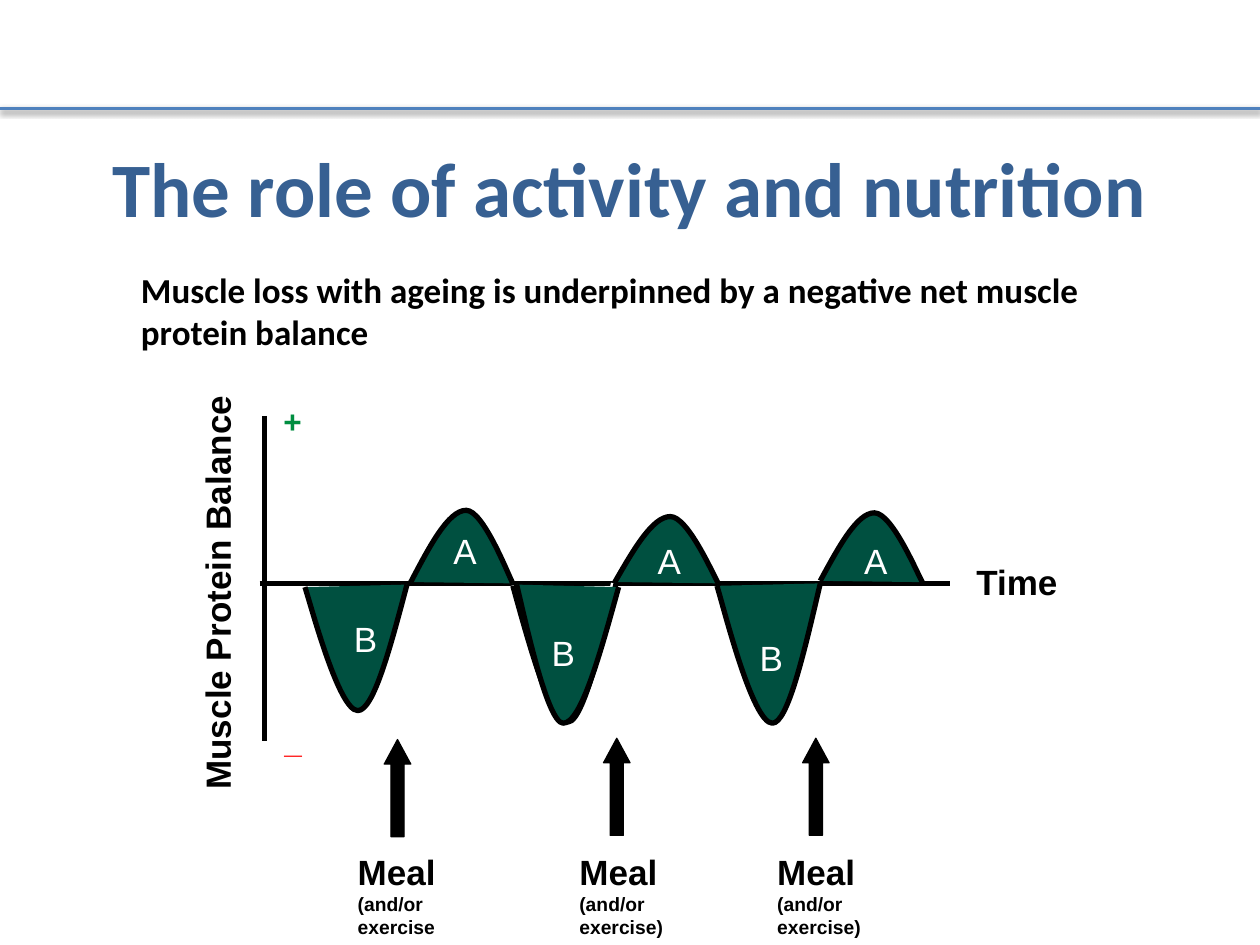
from lxml import etree
from pptx import Presentation
from pptx.dml.color import RGBColor
from pptx.enum.shapes import MSO_CONNECTOR, MSO_SHAPE
from pptx.enum.text import MSO_ANCHOR, MSO_AUTO_SIZE, PP_ALIGN
from pptx.oxml import parse_xml
from pptx.oxml.ns import nsdecls, qn
from pptx.util import Inches, Pt

STRAIGHT = MSO_CONNECTOR.STRAIGHT
UP_ARROW = MSO_SHAPE.UP_ARROW
MIDDLE = MSO_ANCHOR.MIDDLE
FIT_SHAPE = MSO_AUTO_SIZE.SHAPE_TO_FIT_TEXT
CENTER = PP_ALIGN.CENTER

COLORS = {
    "black": "000000", "white": "FFFFFF", "rule": "4F81BD", "title": "376092",
    "wave": "005040", "plus": "008E40", "minus": "FF0000",
}

# Half-waves in drawing order, as (start, peak, end) offsets from the axis crossing.
TROUGH_OUTLINES = [
    ("white", (1.96, 0.02), (2.40, 1.13), (2.77, 0)),
    ("black", (1.97, 0.02), (2.41, 1.10), (2.79, 0)),
]
HALF_WAVES = [
    ((2.81, 0.03), (2.37, 1.11), (2.00, 0.01)),
    ((1.16, -0.01), (1.60, -0.58), (1.97, 0)),
    ((2.78, -0.01), (3.22, -0.53), (3.60, 0)),
    ((4.41, 0), (4.03, 1.11), (3.59, 0.02)),
    ((4.41, -0.02), (4.84, -0.56), (5.22, -0.01)),
]
FIRST_TROUGH = ((1.13, 0.01), (0.74, 1.01), (0.32, 0.03))
WAVE_LABELS = [
    ("A", 1.40, -0.48), ("A", 3.02, -0.40), ("A", 4.66, -0.40),
    ("B", 2.18, 0.33), ("B", 3.83, 0.37), ("B", 0.61, 0.22),
]
# Arrow left and top, caption left and width, last caption line.
MEALS = [
    (3.05, 5.87, 2.74, 0.82, "exercise"),
    (4.79, 5.86, 4.50, 0.87, "exercise)"),
    (6.37, 5.86, 6.07, 0.87, "exercise)"),
]


def rgb(name):
    return RGBColor.from_string(COLORS[name])


def style_font(paragraph, size, color, face="Arial", bold=True):
    font = paragraph.font
    font.size, font.name, font.bold = Pt(size), face, bold
    font.color.rgb = rgb(color)


def add_text(shapes, box, lines, color="black", face="Arial", bold=True, wrap=False):
    """Add a text box; lines is a list of (text, size) paragraphs."""
    text_box = shapes.add_textbox(*map(Inches, box))
    frame = text_box.text_frame
    frame.word_wrap = wrap
    frame.auto_size = FIT_SHAPE
    for index, (text, size) in enumerate(lines):
        paragraph = frame.add_paragraph() if index else frame.paragraphs[0]
        paragraph.text = text
        style_font(paragraph, size, color, face, bold)
    return text_box


def add_line(shapes, start, end, color, width):
    line = shapes.add_connector(STRAIGHT, *map(Inches, (*start, *end)))
    line.line.color.rgb = rgb(color)
    line.line.width = Pt(width)
    etree.SubElement(line._element.spPr, qn("a:effectLst"))
    return line


def curve_segments(shape):
    """Turn each three line segments of a freeform into one cubic curve."""
    segments = list(shape._element.iter(qn("a:lnTo")))
    for first in range(0, len(segments), 3):
        curve = etree.Element(qn("a:cubicBezTo"))
        segments[first].addprevious(curve)
        for segment in segments[first:first + 3]:
            curve.append(segment[0])
            segment.getparent().remove(segment)


def add_half_wave(shapes, origin, start, peak, end, fill=None, line="black"):
    """Draw one crest or trough from start over peak to end."""
    start, peak, end = [(origin[0] + x, origin[1] + y) for x, y in (start, peak, end)]

    def between(a, b, across, along):
        return a[0] + across * (b[0] - a[0]), a[1] + along * (b[1] - a[1])

    points = [
        between(start, peak, 0.34, 0.5), between(start, peak, 0.68, 1), peak,
        between(peak, end, 0.36, 0), between(peak, end, 0.87, 0.83), end,
    ]
    builder = shapes.build_freeform(Inches(start[0]), Inches(start[1]))
    builder.add_line_segments([(Inches(x), Inches(y)) for x, y in points], close=False)
    wave = builder.convert_to_shape()
    curve_segments(wave)
    wave.shadow.inherit = False
    if fill:
        wave.fill.solid()
        wave.fill.fore_color.rgb = rgb(fill)
    else:
        wave.fill.background()
    wave.line.color.rgb = rgb(line)
    wave.line.width = Pt(3)


def add_header(slide, width):
    rule = add_line(slide.shapes, (width, 0.86), (0, 0.86), "rule", 2)
    rule._element.spPr.find(qn("a:effectLst")).append(parse_xml(
        f'<a:outerShdw {nsdecls("a")} blurRad="40000" dist="20000" dir="5400000" '
        'rotWithShape="0"><a:srgbClr val="000000"><a:alpha val="38000"/>'
        '</a:srgbClr></a:outerShdw>'))
    title = slide.shapes.title
    title.left, title.top, title.width, title.height = map(
        Inches, (0.5, 0.86, width - 1, 1.25))
    title.text_frame.text = "The role of activity and nutrition"
    title.text_frame.vertical_anchor = MIDDLE
    paragraph = title.text_frame.paragraphs[0]
    paragraph.alignment = CENTER
    style_font(paragraph, 44, "title", "Calibri")


def add_axes(shapes, origin):
    x, y = origin
    add_line(shapes, (x, y - 1.33), (x, y + 1.25), "black", 3)
    add_line(shapes, (x - 0.04, y), (x + 5.44, y), "black", 3)
    axis_title = add_text(shapes, (x - 2.05, y - 0.16, 3.35, 0.44),
                          [("Muscle Protein Balance", 20)])
    axis_title.rotation = 270
    add_text(shapes, (x + 5.55, y - 0.23, 0.85, 0.43), [("Time", 20)])


def add_waves(shapes, origin):
    for color, *points in TROUGH_OUTLINES:
        add_half_wave(shapes, origin, *points, line=color)
    for points in (*HALF_WAVES, FIRST_TROUGH):
        add_half_wave(shapes, origin, *points, fill="wave")
    for letter, x, y in WAVE_LABELS:
        add_text(shapes, (origin[0] + x, origin[1] + y, 0.39, 0.44),
                 [(letter, 20)], "white", bold=False)


def add_signs(shapes, origin):
    x, y = origin
    add_text(shapes, (x + 0.05, y - 1.49, 0.4, 0.4), [("+", 18)], "plus", wrap=True)
    add_text(shapes, (x + 0.06, y + 1.05, 0.4, 0.4), [("_", 18)], "minus", wrap=True)


def add_meals(shapes, caption_top):
    for arrow_left, arrow_top, caption_left, caption_width, last_line in MEALS:
        arrow = shapes.add_shape(
            UP_ARROW, *map(Inches, (arrow_left, arrow_top, 0.21, 0.77)))
        arrow.adjustments[0], arrow.adjustments[1] = 0.5, 0.925
        arrow.shadow.inherit = False
        arrow.fill.solid()
        arrow.fill.fore_color.rgb = arrow.line.color.rgb = rgb("black")
        arrow.line.width = Pt(0.75)
        add_text(shapes, (caption_left, caption_top, caption_width, 0.81),
                 [("Meal", 20), ("(and/or", 11), (last_line, 11)])


def main():
    presentation = Presentation()
    presentation.slide_width, presentation.slide_height = Inches(10), Inches(7.5)
    slide = presentation.slides.add_slide(presentation.slide_layouts[5])
    crossing = (2.10, 4.63)
    add_header(slide, 10)
    add_axes(slide.shapes, crossing)
    add_meals(slide.shapes, 6.70)
    add_waves(slide.shapes, crossing)
    add_signs(slide.shapes, crossing)
    add_text(slide.shapes, (1.02, 2.08, 8.35, 0.77),
             [("Muscle loss with ageing is underpinned by a negative net muscle "
               "protein balance", 20)], face="Calibri", wrap=True)
    presentation.save("out.pptx")


if __name__ == "__main__":
    main()
